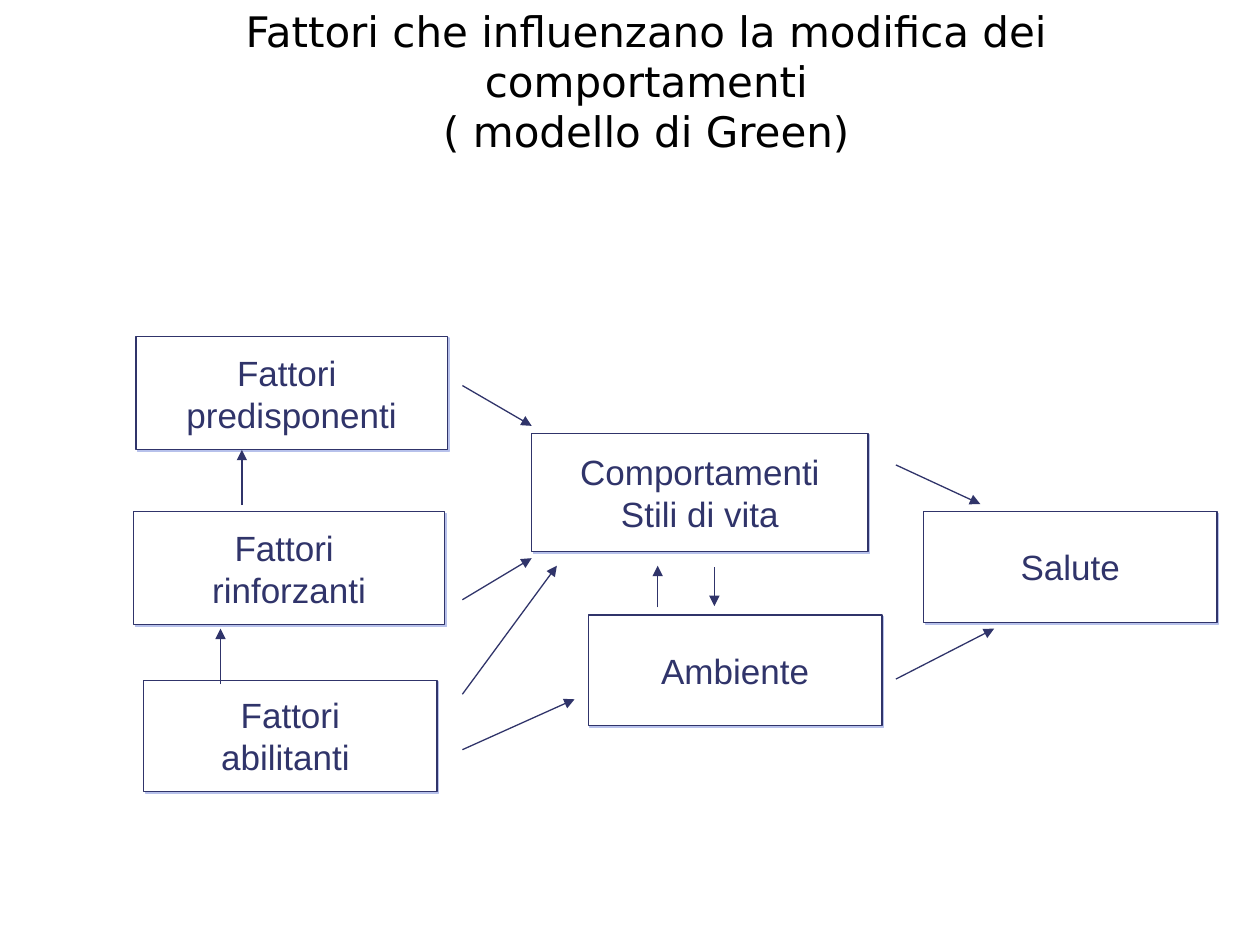
from typing import NamedTuple

from lxml import etree
from pptx import Presentation
from pptx.dml.color import RGBColor
from pptx.enum import shapes, text
from pptx.oxml.ns import qn
from pptx.util import Inches, Pt

COLORS = {"title": "000000", "ink": "30346A", "box": "FFFFFF", "shadow": "B7C1EB"}
TITLE_FONT = {"name": "DejaVu Sans", "size": Pt(24), "bold": False}
BOX_FONT = {"name": "Arial", "size": Pt(20)}
LINE_WIDTH = Pt(0.75)


class Box(NamedTuple):
    left: float
    top: float
    width: float
    height: float
    label: str


class Arrow(NamedTuple):
    x1: float
    y1: float
    x2: float
    y2: float


# The space at the end of a line moves its centred text slightly to the left.
BOXES = [
    Box(1.08, 2.67, 2.47, 0.9, "Fattori \npredisponenti"),
    Box(4.22, 3.44, 2.67, 0.94, "Comportamenti\nStili di vita"),
    Box(1.14, 5.4, 2.33, 0.88, "Fattori\nabilitanti "),
    Box(1.06, 4.06, 2.47, 0.9, "Fattori \nrinforzanti"),
    Box(4.67, 4.88, 2.33, 0.88, "Ambiente"),
    Box(7.33, 4.06, 2.33, 0.88, "Salute"),
]

ARROWS = [
    # Factors to behaviour and environment
    Arrow(3.67, 3.06, 4.22, 3.38),
    Arrow(3.67, 4.76, 4.22, 4.43),
    Arrow(3.67, 5.95, 4.56, 5.55),
    Arrow(3.67, 5.51, 4.42, 4.49),
    # Environment and behaviour to health
    Arrow(7.11, 5.39, 7.89, 4.99),
    Arrow(7.11, 3.69, 7.78, 4),
    # Between behaviour and environment
    Arrow(5.67, 4.5, 5.67, 4.81),
    Arrow(5.22, 4.82, 5.22, 4.49),
    # Between the factors
    Arrow(1.92, 4.01, 1.92, 3.57),
    Arrow(1.75, 5.43, 1.75, 4.99),
]


def rgb(role: str) -> RGBColor:
    return RGBColor.from_string(COLORS[role])


def format_text(frame, font: dict, role: str) -> None:
    for paragraph in frame.paragraphs:
        paragraph.alignment = text.PP_ALIGN.CENTER
        for run in paragraph.runs:
            for attribute, value in font.items():
                setattr(run.font, attribute, value)
            run.font.color.rgb = rgb(role)


def style_line(line) -> None:
    line.color.rgb = rgb("ink")
    line.width = LINE_WIDTH


def add_title(slide, wording: str) -> None:
    title = slide.shapes.title
    title.left, title.top = Inches(0.67), Inches(-0.01)
    title.width, title.height = Inches(8.92), Inches(1.3)
    frame = title.text_frame
    frame.text = wording
    frame.word_wrap = True
    frame.auto_size = text.MSO_AUTO_SIZE.NONE
    frame.vertical_anchor = text.MSO_ANCHOR.BOTTOM
    format_text(frame, TITLE_FONT, "title")


def add_hard_shadow(shape) -> None:
    """Offset an unblurred shadow to the lower right."""
    shape.shadow.inherit = False
    effects = shape.fill._xPr.find(qn("a:effectLst"))
    shadow = etree.SubElement(effects, qn("a:outerShdw"), blurRad="0",
                              dist=str(Pt(1.4)), dir=str(45 * 60000),
                              algn="ctr", rotWithShape="0")
    etree.SubElement(shadow, qn("a:srgbClr"), val=COLORS["shadow"])


def add_box(slide, box: Box) -> None:
    shape = slide.shapes.add_shape(
        shapes.MSO_SHAPE.RECTANGLE, Inches(box.left), Inches(box.top),
        Inches(box.width), Inches(box.height))
    shape.fill.solid()
    shape.fill.fore_color.rgb = rgb("box")
    style_line(shape.line)
    add_hard_shadow(shape)
    frame = shape.text_frame
    frame.text = box.label
    frame.word_wrap = False
    frame.vertical_anchor = text.MSO_ANCHOR.MIDDLE
    format_text(frame, BOX_FONT, "ink")


def add_arrow(slide, arrow: Arrow) -> None:
    connector = slide.shapes.add_connector(
        shapes.MSO_CONNECTOR.STRAIGHT, *(Inches(length) for length in arrow))
    style_line(connector.line)
    etree.SubElement(connector.line._get_or_add_ln(), qn("a:tailEnd"), type="triangle")
    etree.SubElement(connector._element.spPr, qn("a:effectLst"))


def main() -> None:
    deck = Presentation()
    deck.slide_width, deck.slide_height = Inches(10), Inches(7.5)
    slide = deck.slides.add_slide(deck.slide_layouts.get_by_name("Title Only"))
    add_title(slide, "Fattori che influenzano la modifica dei comportamenti\v"
                     "( modello di Green)")
    for box in BOXES:
        add_box(slide, box)
    for arrow in ARROWS:
        add_arrow(slide, arrow)
    deck.save("out.pptx")


if __name__ == "__main__":
    main()
